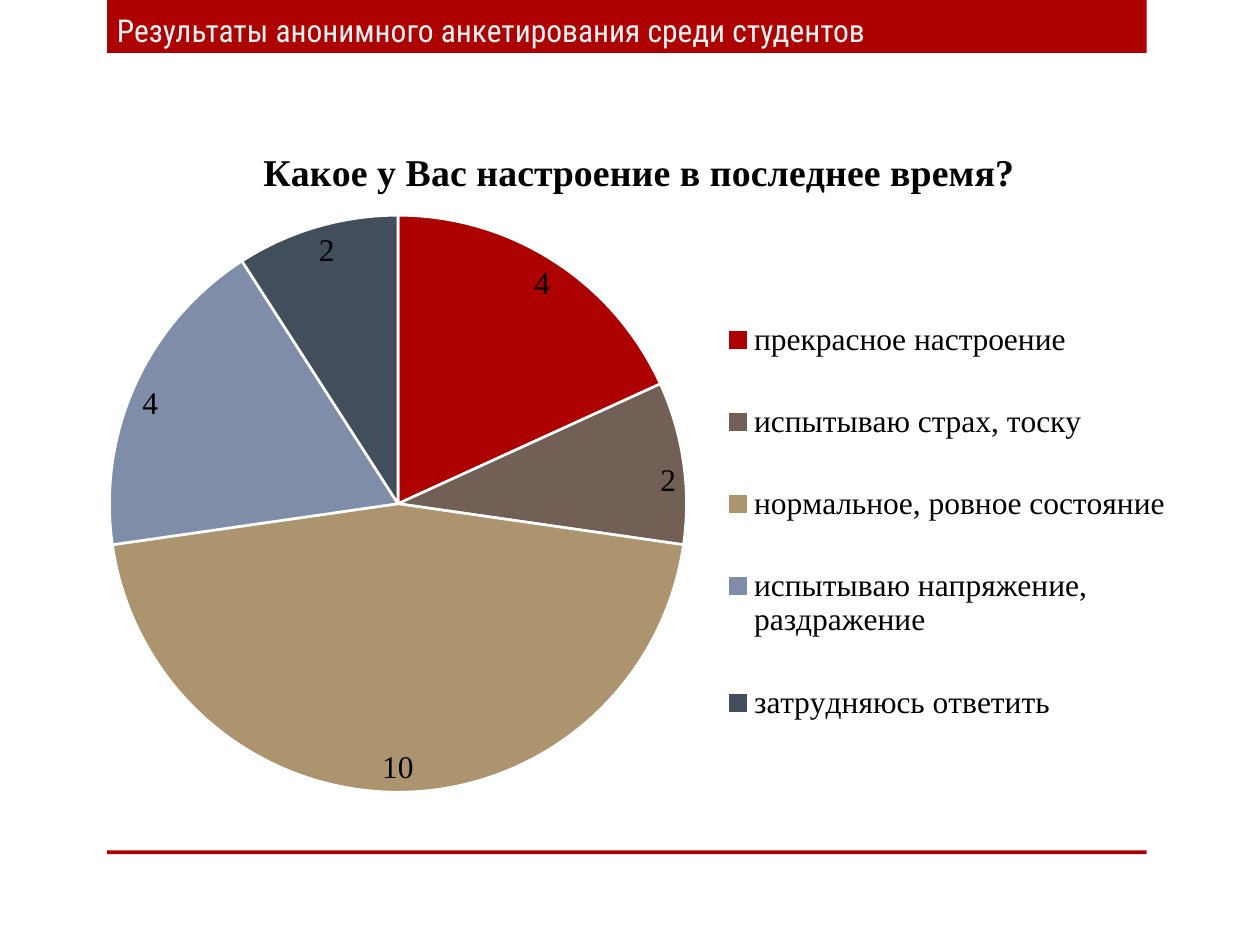
from pptx import Presentation
from pptx.chart.data import CategoryChartData
from pptx.dml.color import RGBColor
from pptx.enum.chart import XL_CHART_TYPE as ChartType, XL_LABEL_POSITION as LabelPos
from pptx.enum.chart import XL_LEGEND_POSITION as LegendPos
from pptx.enum.shapes import MSO_SHAPE as Shape
from pptx.enum.text import MSO_ANCHOR as Anchor
from pptx.oxml import parse_xml
from pptx.oxml.ns import nsdecls
from pptx.util import Inches, Pt

RED = RGBColor(0xAD, 0x01, 0x01)
BROWN = RGBColor(0x72, 0x60, 0x56)
SAND = RGBColor(0xAC, 0x95, 0x6E)
BLUE = RGBColor(0x80, 0x8D, 0xA9)
SLATE = RGBColor(0x42, 0x4E, 0x5B)
BLACK = RGBColor(0, 0, 0)
WHITE = RGBColor(0xFF, 0xFF, 0xFF)
LIGHT = RGBColor(0xF2, 0xF2, 0xF2)


def write(tf, text, *, font, size, color, bold=False):
    r = tf.paragraphs[0].add_run()
    r.text = text
    r.font.name, r.font.size, r.font.bold = font, Pt(size), bold
    r.font.color.rgb = color


def place(chart, part, index, **fractions):
    """Give a chart part a manual layout, in fractions of the chart's size."""
    parent = chart.element.xpath(f"c:chart/c:{part}")[0]
    for old in parent.xpath("c:layout"):
        parent.remove(old)
    inner = '<c:layoutTarget val="inner"/>' if part == "plotArea" else ""
    modes = "".join(f'<c:{k}Mode val="edge"/>' for k in "xy")
    sizes = "".join(f'<c:{k} val="{v}"/>' for k, v in fractions.items())
    parent.insert(index, parse_xml(
        f'<c:layout {nsdecls("c")}><c:manualLayout>{inner}{modes}{sizes}'
        "</c:manualLayout></c:layout>"))


prs = Presentation()
prs.slide_width, prs.slide_height = Inches(10), Inches(7.5)
s = prs.slides.add_slide(prs.slide_layouts[6])

# Header band and footer rule
for top, height in ((0, 0.42), (6.75, 0.03)):
    sp = s.shapes.add_shape(Shape.RECTANGLE, Inches(0.85), Inches(top),
                            Inches(8.25), Inches(height))
    sp.shadow.inherit = False
    sp.fill.solid()
    sp.fill.fore_color.rgb = RED
    sp.line.fill.background()

heading = s.shapes.add_textbox(Inches(0.83), Inches(-0.11), Inches(7.42), Inches(0.55))
tf = heading.text_frame
tf.word_wrap = True
tf.vertical_anchor = Anchor.BOTTOM
write(tf, "Результаты анонимного анкетирования среди студентов",
      font="Roboto Condensed", size=18, color=LIGHT)

# Survey answers
answers = [
    ("прекрасное настроение", 4, RED),
    ("испытываю страх, тоску", 2, BROWN),
    ("нормальное, ровное состояние", 10, SAND),
    ("испытываю напряжение, раздражение", 4, BLUE),
    ("затрудняюсь ответить", 2, SLATE),
]
data = CategoryChartData()
data.categories = [name for name, _, _ in answers]
data.add_series("Series 1", [count for _, count, _ in answers])
chart = s.shapes.add_chart(ChartType.PIE, Inches(0.51), Inches(0.84),
                           Inches(8.98), Inches(5.59), data).chart
chart.font.name, chart.font.size = "Times New Roman", Pt(18)
chart.font.color.rgb = BLACK

chart.has_title = True
write(chart.chart_title.text_frame, "Какое у Вас настроение в последнее время?",
      font="Times New Roman", size=21.6, color=BLACK, bold=True)
chart.has_legend = True
chart.legend.position = LegendPos.RIGHT
chart.legend.include_in_layout = False

plot = chart.plots[0]
plot.vary_by_categories = True
plot.has_data_labels = True
plot.data_labels.show_value = True
plot.data_labels.show_percentage = False
plot.data_labels.position = LabelPos.INSIDE_END
for i, (_, _, color) in enumerate(answers):
    fmt = plot.series[0].points[i].format
    fmt.fill.solid()
    fmt.fill.fore_color.rgb = color
    fmt.line.color.rgb = WHITE
    fmt.line.width = Pt(1.5)

place(chart, "title", 1, x=0.17, y=0.05)
place(chart, "plotArea", 0, x=0.04, y=0.15, w=0.51, h=0.83)
place(chart, "legend", 1, x=0.58, y=0.24, w=0.4, h=0.7)

prs.save("out.pptx")
